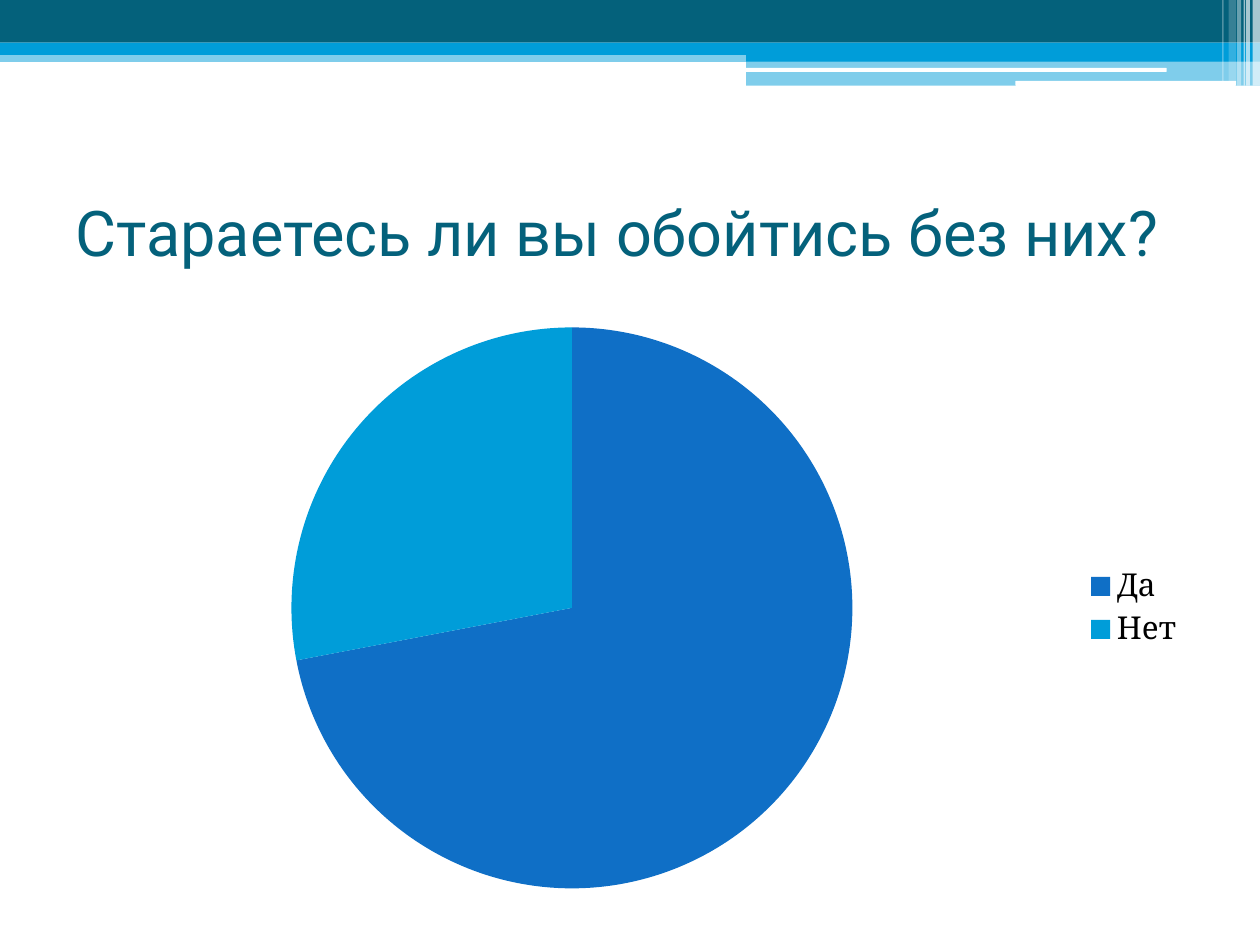
"""Build a survey slide with a banded header, a title and a pie chart."""
from lxml import etree
from pptx import Presentation
from pptx import util as u
from pptx.chart import data
from pptx.dml import color
from pptx.enum import chart as charts, shapes, text
from pptx.oxml import ns

COLORS = {"teal": "04617B", "sky": "009DD9", "blue": "0F6FC6", "white": "FFFFFF", "black": "000000"}
INCH = 2.54


def place(inches):
    return [u.Cm(round(value * INCH, 2)) for value in inches]


def paint(fill, name, opacity=100):
    fill.solid()
    fill.fore_color.rgb = color.RGBColor.from_string(COLORS[name])
    if opacity < 100:
        tint = fill._xPr.find(".//" + ns.qn("a:srgbClr"))
        etree.SubElement(tint, ns.qn("a:alpha"), val=str(opacity * 1000))


presentation = Presentation()
presentation.slide_width, presentation.slide_height = place((10, 7.5))
slide = presentation.slides.add_slide(presentation.slide_layouts[5])

RECTANGLE = shapes.MSO_SHAPE.RECTANGLE
ROUNDED = shapes.MSO_SHAPE.ROUNDED_RECTANGLE
bands = [
    (RECTANGLE, (0, 0.4, 10, 0.09), "sky", 50),
    (RECTANGLE, (0, 0, 10, 0.34), "teal", 100),
    (RECTANGLE, (0, 0.34, 10, 0.1), "sky", 100),
    (RECTANGLE, (5.92, 0.39, 4.08, 0.1), "sky", 100),
    (RECTANGLE, (5.92, 0.48, 4.08, 0.2), "sky", 50),
    (ROUNDED, (5.91, 0.54, 3.35, 0.03), "white", 100),
    (ROUNDED, (8.06, 0.64, 1.75, 0.04), "white", 100),
]
stripes = [
    (9.94, 0.06, 0.68, 65),
    (9.89, 0.03, 0.68, 65),
    (9.87, 0.01, 0.68, 60),
    (9.82, 0.03, 0.68, 40),
    (9.75, 0.06, 0.64, 20),
    (9.7, 0.01, 0.64, 30),
]
bands += [(RECTANGLE, (left, 0, width, height), "white", opacity) for left, width, height, opacity in stripes]
for kind, box, name, opacity in bands:
    shape = slide.shapes.add_shape(kind, *place(box))
    shape.shadow.inherit = False
    shape.line.fill.background()
    paint(shape.fill, name, opacity)

title = slide.shapes.title
title.left, title.top, title.width, title.height = place((0.5, 1.25, 9, 1.17))
title.text_frame.text = "Стараетесь ли вы обойтись без них?"
title.text_frame.vertical_anchor = text.MSO_ANCHOR.MIDDLE
title.text_frame.word_wrap = True
paragraph = title.text_frame.paragraphs[0]
paragraph.alignment = text.PP_ALIGN.LEFT

answers = data.CategoryChartData()
answers.categories = ["Да", "Нет"]
answers.add_series("Series 1", (72, 28))
frame = slide.shapes.add_chart(charts.XL_CHART_TYPE.PIE, *place((0.5, 2.46, 9, 4.73)), answers)
chart = frame.chart
chart.has_title = False
chart.has_legend = True
legend_format = {"position": charts.XL_LEGEND_POSITION.RIGHT, "include_in_layout": False}
for key, value in legend_format.items():
    setattr(chart.legend, key, value)

plot = chart.plots[0]
plot.vary_by_categories = True
for index, name in enumerate(("blue", "sky")):
    point = plot.series[0].points[index]
    paint(point.format.fill, name)
    point.format.line.fill.background()

fonts = [
    (paragraph.runs[0].font, {"name": "Roboto", "size": u.Pt(36)}, "teal"),
    (chart.font, {"name": "Cambria", "size": u.Pt(18)}, "black"),
]
for font, values, name in fonts:
    for key, value in values.items():
        setattr(font, key, value)
    font.color.rgb = color.RGBColor.from_string(COLORS[name])

presentation.save("out.pptx")
